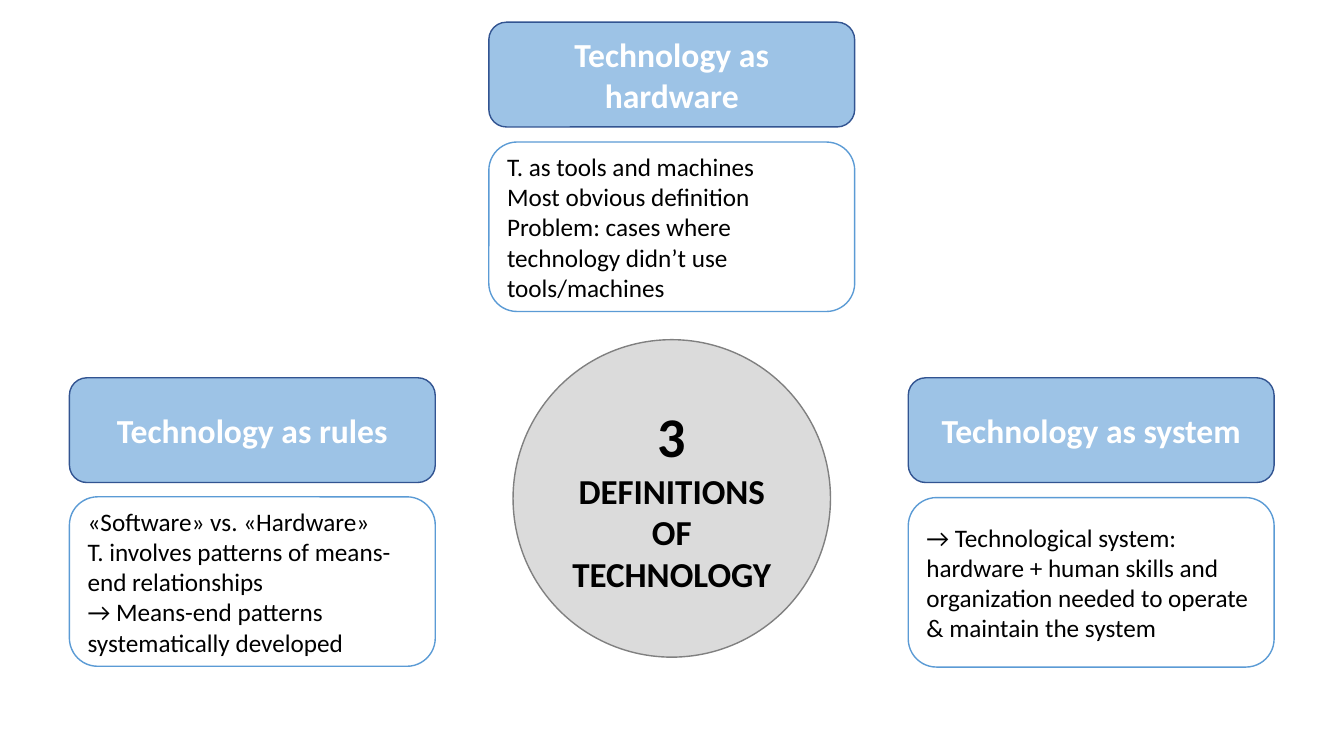
from dataclasses import dataclass

from pptx import Presentation
from pptx.dml.color import RGBColor
from pptx.enum.shapes import MSO_SHAPE
from pptx.enum.text import MSO_ANCHOR, PP_ALIGN
from pptx.util import Cm, Pt


@dataclass(frozen=True)
class Theme:
    font: str = "Calibri"
    white: str = "FFFFFF"
    black: str = "000000"
    head_fill: str = "9DC3E6"
    head_line: str = "325491"
    body_line: str = "5B9BD5"
    hub_fill: str = "DBDBDB"
    hub_line: str = "808080"
    head_size: int = 24
    body_size: int = 18
    count_size: int = 40
    hub_size: int = 25


THEME = Theme()
CARD_WIDTH = 9.22
HEAD_HEIGHT = 2.64
BODY_HEIGHT = 4.27
CARDS = [
    (12.32, 0.56, 0.38, "Technology as hardware", [
        "T. as tools and machines",
        "Most obvious definition",
        "Problem: cases where technology didn’t use tools/machines",
    ]),
    (1.75, 9.52, 0.36, "Technology as rules", [
        "«Software» vs. «Hardware»",
        "T. involves patterns of means-end relationships",
        "→ Means-end patterns systematically developed",
    ]),
    (22.89, 9.52, 0.38, "Technology as system", [
        "→ Technological system: hardware + human skills and "
        "organization needed to operate & maintain the system",
    ]),
]


def add_panel(slide, kind, box, fill, line):
    panel = slide.shapes.add_shape(kind, *map(Cm, box))
    panel.shadow.inherit = False
    panel.fill.solid()
    panel.fill.fore_color.rgb = RGBColor.from_string(fill)
    panel.line.color.rgb = RGBColor.from_string(line)
    panel.line.width = Pt(1)
    return panel


def set_text(panel, lines, sizes, color, bold, align):
    frame = panel.text_frame
    frame.word_wrap = True
    frame.vertical_anchor = MSO_ANCHOR.MIDDLE
    frame.text = "\n".join(lines)
    for para, size in zip(frame.paragraphs, sizes):
        para.alignment = align
        for run in para.runs:
            run.font.name = THEME.font
            run.font.size = Pt(size)
            run.font.bold = bold
            run.font.color.rgb = RGBColor.from_string(color)


def add_card(slide, left, top, gap, title, lines):
    head = add_panel(slide, MSO_SHAPE.ROUNDED_RECTANGLE,
                     (left, top, CARD_WIDTH, HEAD_HEIGHT),
                     THEME.head_fill, THEME.head_line)
    set_text(head, [title], [THEME.head_size], THEME.white, True, PP_ALIGN.CENTER)
    body = add_panel(slide, MSO_SHAPE.ROUNDED_RECTANGLE,
                     (left, top + HEAD_HEIGHT + gap, CARD_WIDTH, BODY_HEIGHT),
                     THEME.white, THEME.body_line)
    set_text(body, lines, [THEME.body_size] * len(lines),
             THEME.black, False, PP_ALIGN.LEFT)


def add_hub(slide, left, top, size):
    hub = add_panel(slide, MSO_SHAPE.OVAL, (left, top, size, size),
                    THEME.hub_fill, THEME.hub_line)
    set_text(hub, ["3", "DEFINITIONS OF TECHNOLOGY"],
             [THEME.count_size, THEME.hub_size],
             THEME.black, True, PP_ALIGN.CENTER)


def main():
    deck = Presentation()
    deck.slide_width = Cm(33.87)
    deck.slide_height = Cm(19.05)
    slide = deck.slides.add_slide(deck.slide_layouts[6])
    for card in CARDS:
        add_card(slide, *card)
    add_hub(slide, 12.93, 8.56, 8)
    deck.save("out.pptx")


if __name__ == "__main__":
    main()
